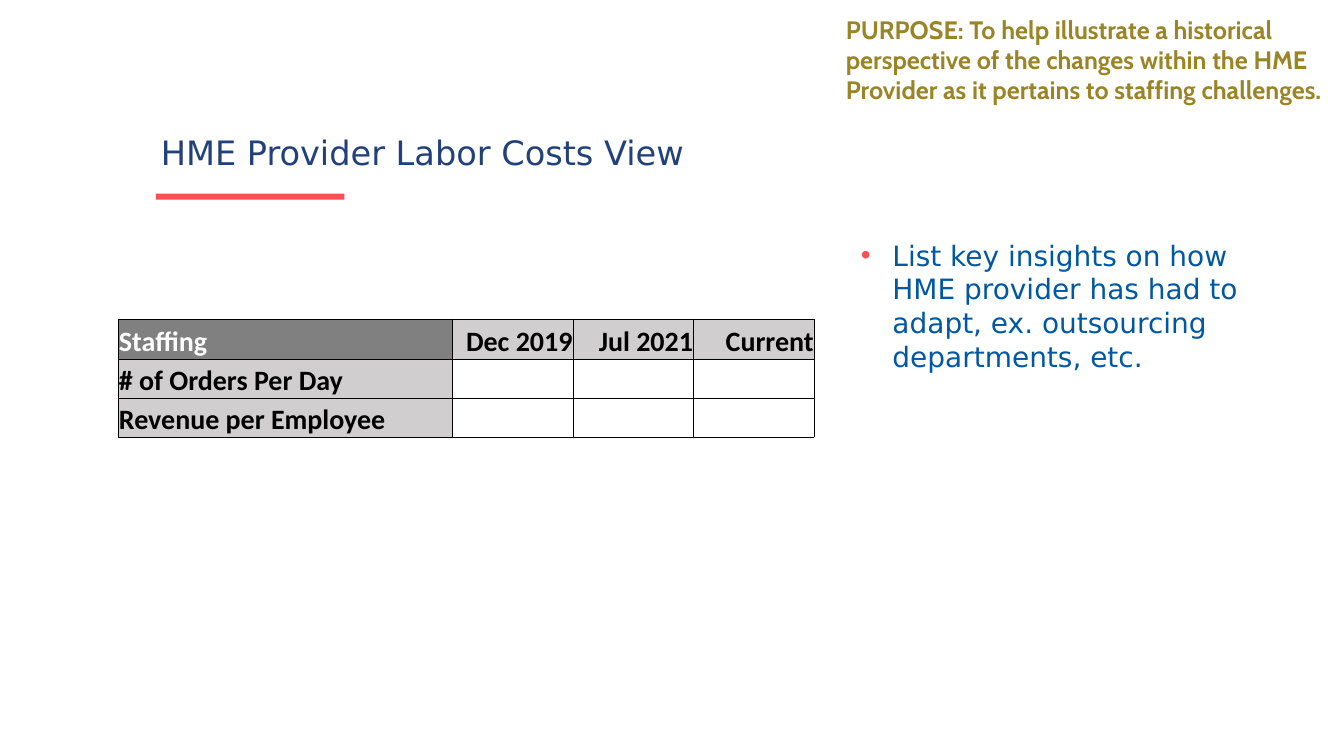
from dataclasses import dataclass

from lxml.etree import SubElement
from pptx import Presentation
from pptx.dml.color import RGBColor
from pptx.enum.shapes import MSO_SHAPE
from pptx.enum.text import MSO_ANCHOR, MSO_AUTO_SIZE, PP_ALIGN
from pptx.oxml.ns import qn
from pptx.util import Pt


@dataclass(frozen=True)
class Theme:
    navy: str = "22417B"
    blue: str = "0058A3"
    red: str = "F75152"
    gold: str = "998525"
    gray: str = "808080"
    pale: str = "D0CECE"
    black: str = "000000"
    white: str = "FFFFFF"
    sans: str = "DejaVu Sans"
    grid: str = "Calibri"
    note: str = "Cabin"
    head: int = 48
    body: int = 40
    small: int = 36


THEME = Theme()


def paint(fill, color):
    fill.solid()
    fill.fore_color.rgb = RGBColor.from_string(color)


def write(frame, text, font=THEME.sans, size=THEME.body, color=THEME.black,
          bold=False, align=PP_ALIGN.LEFT, lead=None, dot=None, hang=0):
    frame.word_wrap = True
    para = frame.paragraphs[0]
    para.text = text
    para.alignment = align
    para.space_before = Pt(0)
    if lead:
        para.line_spacing = Pt(lead)
    if dot:
        props = para._p.get_or_add_pPr()
        props.set("marL", str(Pt(hang)))
        props.set("indent", str(-Pt(hang)))
        tint = SubElement(props, qn("a:buClr"))
        SubElement(tint, qn("a:srgbClr"), val=dot)
        SubElement(props, qn("a:buFont"), typeface="Arial")
        SubElement(props, qn("a:buChar"), char="•")
    style = para.runs[0].font
    style.name = font
    style.size = Pt(size)
    style.bold = bold
    style.color.rgb = RGBColor.from_string(color)


def add_title(slide, left, top, width, height):
    title = slide.shapes.title
    title.left, title.top = Pt(left), Pt(top)
    title.width, title.height = Pt(width), Pt(height)
    frame = title.text_frame
    frame.auto_size = MSO_AUTO_SIZE.NONE
    frame.vertical_anchor = MSO_ANCHOR.TOP
    write(frame, "HME Provider Labor Costs View", size=THEME.head,
          color=THEME.navy, lead=130)
    bar = slide.shapes.add_shape(MSO_SHAPE.RECTANGLE, Pt(left),
                                 Pt(top + height), Pt(269.28), Pt(8.64))
    bar.shadow.inherit = False
    paint(bar.fill, THEME.red)
    bar.line.fill.background()


def rule(cell, **sides):
    props = cell._tc.get_or_add_tcPr()
    for side, width in sides.items():
        line = SubElement(props, qn(f"a:ln{side}"), w=str(Pt(width)))
        fill = SubElement(line, qn("a:solidFill"))
        SubElement(fill, qn("a:srgbClr"), val=THEME.black)


def add_grid(slide, left, top, width, height):
    rows = [["Staffing", "Dec 2019", "Jul 2021", "Current"],
            ["# of Orders Per Day", "", "", ""],
            ["Revenue per Employee", "", "", ""]]
    wide, tall = 477, 57.6
    table = slide.shapes.add_table(len(rows), len(rows[0]), Pt(left), Pt(top),
                                   Pt(width), Pt(height)).table
    table.first_row = table.horz_banding = False
    for c, col in enumerate(table.columns):
        col.width = Pt((width - wide) / 3 if c else wide)
    for r, row in enumerate(table.rows):
        row.height = Pt((height - tall) / 2 if r else tall)
    across = [1, 1, 0.5, 0.5]
    down = [1, 1, 0.5, 0.5, 0.5]
    for r, row in enumerate(rows):
        for c, text in enumerate(row):
            cell = table.cell(r, c)
            rule(cell, L=down[c], R=down[c + 1], T=across[r], B=across[r + 1])
            cell.margin_left = cell.margin_right = cell.margin_top = Pt(0.72)
            cell.margin_bottom = Pt(0)
            cell.vertical_anchor = MSO_ANCHOR.BOTTOM
            if not text:
                cell.fill.background()
                continue
            first = r == c == 0
            paint(cell.fill, THEME.gray if first else THEME.pale)
            write(cell.text_frame, text, font=THEME.grid, bold=True,
                  color=THEME.white if first else THEME.black,
                  align=PP_ALIGN.RIGHT if c else PP_ALIGN.LEFT)


def add_text(slide, left, top, width, height, text, fit=MSO_AUTO_SIZE.NONE,
             **style):
    box = slide.shapes.add_textbox(Pt(left), Pt(top), Pt(width), Pt(height))
    box.text_frame.auto_size = fit
    write(box.text_frame, text, **style)


def main():
    deck = Presentation()
    deck.slide_width, deck.slide_height = Pt(1919.52), Pt(1080)
    slide = deck.slides.add_slide(deck.slide_layouts[5])
    add_title(slide, 222.48, 113.04, 1557.36, 163.44)
    add_grid(slide, 169.2, 455.76, 993.6, 168.48)
    add_text(slide, 1222.56, 336.96, 563.76, 504.72,
             "List key insights on how HME provider has had to adapt, "
             "ex. outsourcing departments, etc.",
             color=THEME.blue, dot=THEME.red, hang=45)
    add_text(slide, 1200.96, 16.56, 753.84, 181.44,
             "PURPOSE: To help illustrate a historical perspective of the "
             "changes within the HME Provider as it pertains to staffing "
             "challenges.", fit=MSO_AUTO_SIZE.SHAPE_TO_FIT_TEXT,
             font=THEME.note, size=THEME.small, color=THEME.gold, bold=True)
    deck.save("out.pptx")


if __name__ == "__main__":
    main()
